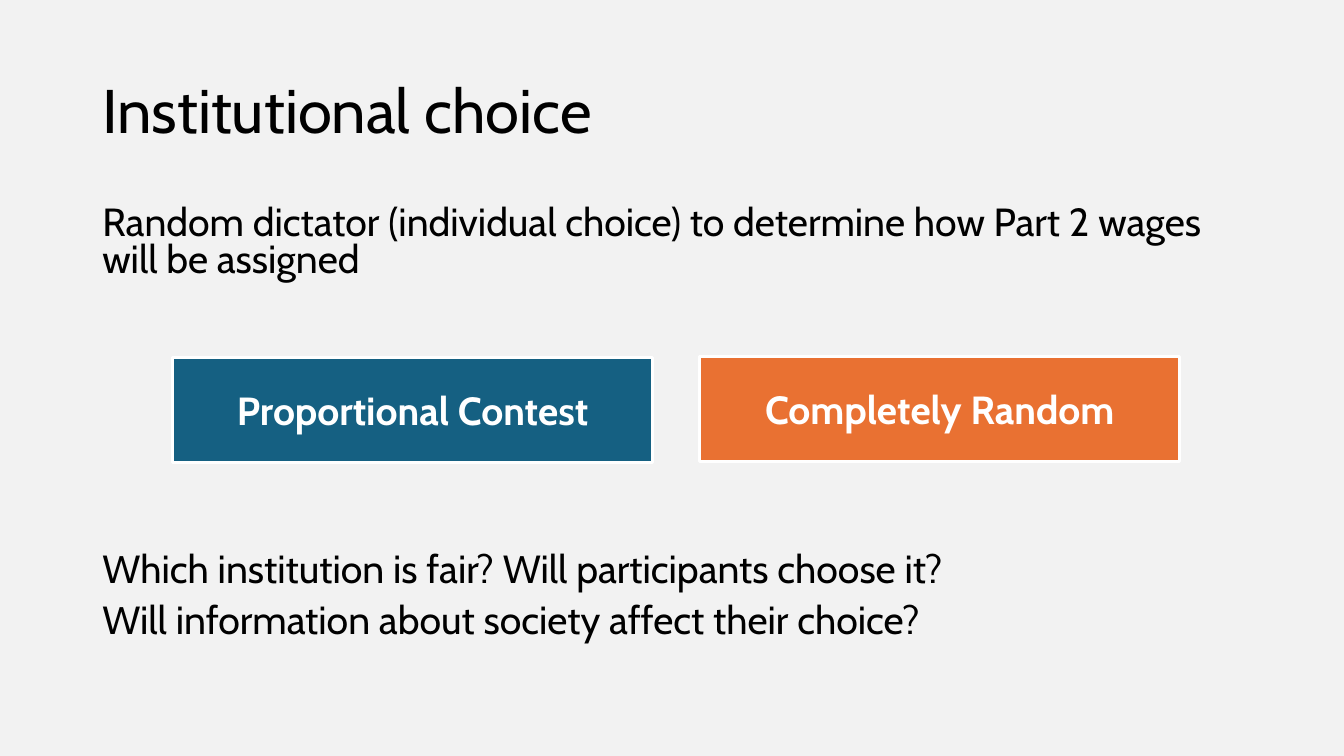
import pptx
import pptx.util
import pptx.dml.color
import pptx.enum.shapes
import pptx.enum.text
from pptx.util import Cm, Pt


def color(value):
    return pptx.dml.color.RGBColor.from_string(value)


def style(p, size, value, bold=False):
    p.font.name = "Cabin"
    p.font.size = Pt(size)
    p.font.bold = bold
    p.font.color.rgb = color(value)


prs = pptx.Presentation()
prs.slide_width = Cm(33.87)
prs.slide_height = Cm(19.05)
s = prs.slides.add_slide(prs.slide_layouts[6])
s.background.fill.solid()
s.background.fill.fore_color.rgb = color("F2F2F2")

title = s.shapes.add_textbox(Cm(2.33), Cm(1.01), Cm(29.21), Cm(3.68))
tf = title.text_frame
tf.word_wrap = True
tf.vertical_anchor = pptx.enum.text.MSO_ANCHOR.MIDDLE
p = tf.paragraphs[0]
p.text = "Institutional choice"
p.line_spacing = 0.9
style(p, 44, "000000")

body = s.shapes.add_textbox(Cm(2.33), Cm(5.07), Cm(29.21), Cm(12.09))
tf = body.text_frame
tf.word_wrap = True
lines = [
    ("Random dictator (individual choice) to determine how Part 2 wages will be assigned", 10),
    ("Which institution is fair? Will participants choose it?", 194),
    ("Will information about society affect their choice?", 10),
]
for i, (text, before) in enumerate(lines):
    p = tf.add_paragraph() if i else tf.paragraphs[0]
    p.text = text
    p.line_spacing = 0.8
    p.space_before = Pt(before)
    style(p, 28, "000000")

institutions = [
    ("Proportional Contest", "156082", 4.35, 9.0),
    ("Completely Random", "E97132", 17.63, 8.98),
]
for text, fill, left, top in institutions:
    sp = s.shapes.add_shape(
        pptx.enum.shapes.MSO_SHAPE.RECTANGLE, Cm(left), Cm(top), Cm(12.1), Cm(2.65))
    sp.shadow.inherit = False
    sp.fill.solid()
    sp.fill.fore_color.rgb = color(fill)
    sp.line.color.rgb = color("FFFFFF")
    sp.line.width = Pt(2)
    tf = sp.text_frame
    tf.word_wrap = True
    tf.vertical_anchor = pptx.enum.text.MSO_ANCHOR.MIDDLE
    p = tf.paragraphs[0]
    p.text = text
    p.alignment = pptx.enum.text.PP_ALIGN.CENTER
    style(p, 28, "FFFFFF", True)

prs.save("out.pptx")
